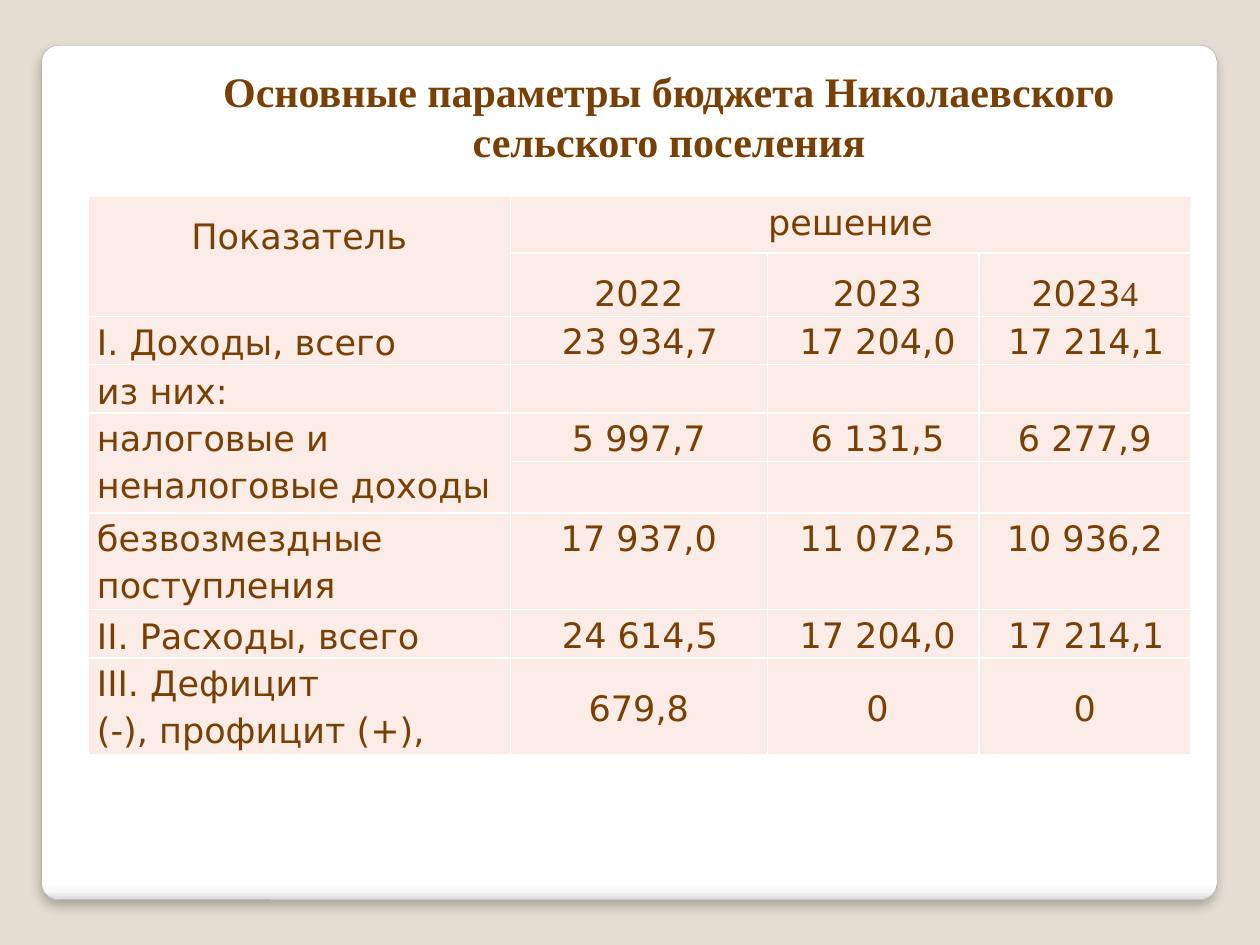
from lxml.etree import SubElement as Sub
from pptx import Presentation
from pptx.dml.color import RGBColor
from pptx.enum.shapes import MSO_SHAPE as Shape
from pptx.enum.text import MSO_ANCHOR as Anchor, MSO_AUTO_SIZE as Fit, PP_ALIGN as Align
from pptx.oxml.ns import qn
from pptx.util import Inches, Pt

HUES = {"back": "E3DED1", "ink": "784004", "cell": "FCECE7", "rule": "FFFFFF",
        "edge": "A4A4A4", "shade": "000000"}
GLOSS = [(0, "FFFFFF"), (98, "FFFFFF"), (99, "F7F7F7"), (100, "DADADA")]
SANS, SERIF = "DejaVu Sans", "Times New Roman"
COLS = [3.35, 2.04, 1.68, 1.68]
ROWS = [0.45, 0.5, 0.38, 0.38, 0.38, 0.41, 0.76, 0.38, 0.76]
DATA = [
    (2, "I. Доходы, всего", ["23 934,7", "17 204,0", "17 214,1"], 0.02),
    (3, "из них:", [], 0),
    (4, "налоговые и неналоговые доходы", ["5 997,7", "6 131,5", "6 277,9"], -0.07),
    (6, "безвозмездные поступления", ["17 937,0", "11 072,5", "10 936,2"], -0.07),
    (7, "II. Расходы, всего", ["24 614,5", "17 204,0", "17 214,1"], 0.02),
    (8, "III. Дефицит\n(-), профицит (+),", ["679,8", "0", "0"], 0),
]


def hue(name):
    """Return the named colour."""
    return RGBColor.from_string(HUES[name])


def tint(node, code):
    """Add an RGB colour to an XML node."""
    return Sub(node, qn("a:srgbClr"), val=code)


def write(frame, text, size=20, face=SANS, bold=False, align=Align.CENTER,
          lead=1.15, shift=0, tail=""):
    """Fill a text frame, one paragraph a line, with an optional serif tail."""
    for num, line in enumerate(text.split("\n")):
        para = frame.add_paragraph() if num else frame.paragraphs[0]
        para.alignment, para.line_spacing = align, lead
        if shift:
            para._p.get_or_add_pPr().set("indent", str(Inches(shift)))
        for part, font in ((line, face), (tail, SERIF)):
            if part:
                run = para.add_run()
                run.text = part
                run.font.name, run.font.size = font, Pt(size)
                run.font.bold, run.font.color.rgb = bold, hue("ink")


def panel(slide):
    """Draw the rounded white panel with its gloss and shadow."""
    box = slide.shapes.add_shape(Shape.ROUNDED_RECTANGLE, Inches(0.33), Inches(0.36),
                                 Inches(9.33), Inches(6.78))
    box.adjustments[0] = 0.02
    box.line.color.rgb, box.line.width = hue("edge"), Pt(0.16)
    box.fill.gradient()
    props = box._element.spPr
    stops = props.find(".//" + qn("a:gsLst"))
    for stop in list(stops):
        stops.remove(stop)
    for place, code in GLOSS:
        tint(Sub(stops, qn("a:gs"), pos=str(place * 1000)), code)
    props.find(".//" + qn("a:lin")).set("ang", "5400000")
    box.shadow.inherit = False
    glow = Sub(props.find(qn("a:effectLst")), qn("a:outerShdw"), blurRad=str(Pt(6)),
               dist=str(Pt(4)), dir="5400000", algn="tl", rotWithShape="0")
    Sub(tint(glow, HUES["shade"]), qn("a:alpha"), val="25000")


def title(slide):
    """Place the heading."""
    frame = slide.shapes.add_textbox(Inches(1.09), Inches(0.47), Inches(8.44),
                                     Inches(0.91)).text_frame
    frame.word_wrap, frame.auto_size = True, Fit.SHAPE_TO_FIT_TEXT
    write(frame, "Основные параметры бюджета Николаевского сельского поселения",
          size=24, face=SERIF, bold=True, lead=1.0)


def dress(cell):
    """Set the margins, borders and fill of a cell."""
    cell.margin_left = cell.margin_right = Inches(0.07)
    cell.margin_top = cell.margin_bottom = 0
    props = cell._tc.get_or_add_tcPr()
    for side in "LRTB":
        line = Sub(props, qn("a:ln" + side), w=str(Pt(1)))
        tint(Sub(line, qn("a:solidFill")), HUES["rule"])
    cell.fill.solid()
    cell.fill.fore_color.rgb = hue("cell")


def grid(slide):
    """Add the empty table with its merged cells."""
    table = slide.shapes.add_table(len(ROWS), len(COLS), Inches(0.7), Inches(1.56),
                                   Inches(sum(COLS)), Inches(sum(ROWS))).table
    table.first_row = table.horz_banding = False
    for col, wide in zip(table.columns, COLS):
        col.width = Inches(wide)
    for row, high in zip(table.rows, ROWS):
        row.height = Inches(high)
    for cell in table.iter_cells():
        dress(cell)
    for start, end in (((0, 0), (1, 0)), ((0, 1), (0, 3)), ((4, 0), (5, 0))):
        table.cell(*start).merge(table.cell(*end))
    return table


def fill(table):
    """Write the headings and the budget figures."""
    def put(row, col, text, mid=False, **style):
        cell = table.cell(row, col)
        cell.vertical_anchor = Anchor.MIDDLE if mid else Anchor.TOP
        write(cell.text_frame, text, **style)

    put(0, 0, "Показатель", lead=1.5, shift=-0.07)
    put(0, 1, "решение")
    put(1, 1, "2022", lead=1.5)
    put(1, 2, "2023", lead=1.5, shift=0.07)
    put(1, 3, "2023", lead=1.5, tail="4")
    for row, label, sums, shift in DATA:
        put(row, 0, label, mid=row in (2, 3, 7), align=Align.LEFT)
        for col, text in enumerate(sums, 1):
            put(row, col, text, mid=row == 8, shift=0.07 if col == 2 else shift)


def main():
    """Build the budget slide."""
    deck = Presentation()
    deck.slide_width, deck.slide_height = Inches(10), Inches(7.5)
    slide = deck.slides.add_slide(deck.slide_layouts[6])
    slide.background.fill.solid()
    slide.background.fill.fore_color.rgb = hue("back")
    panel(slide)
    title(slide)
    fill(grid(slide))
    deck.save("out.pptx")


if __name__ == "__main__":
    main()
